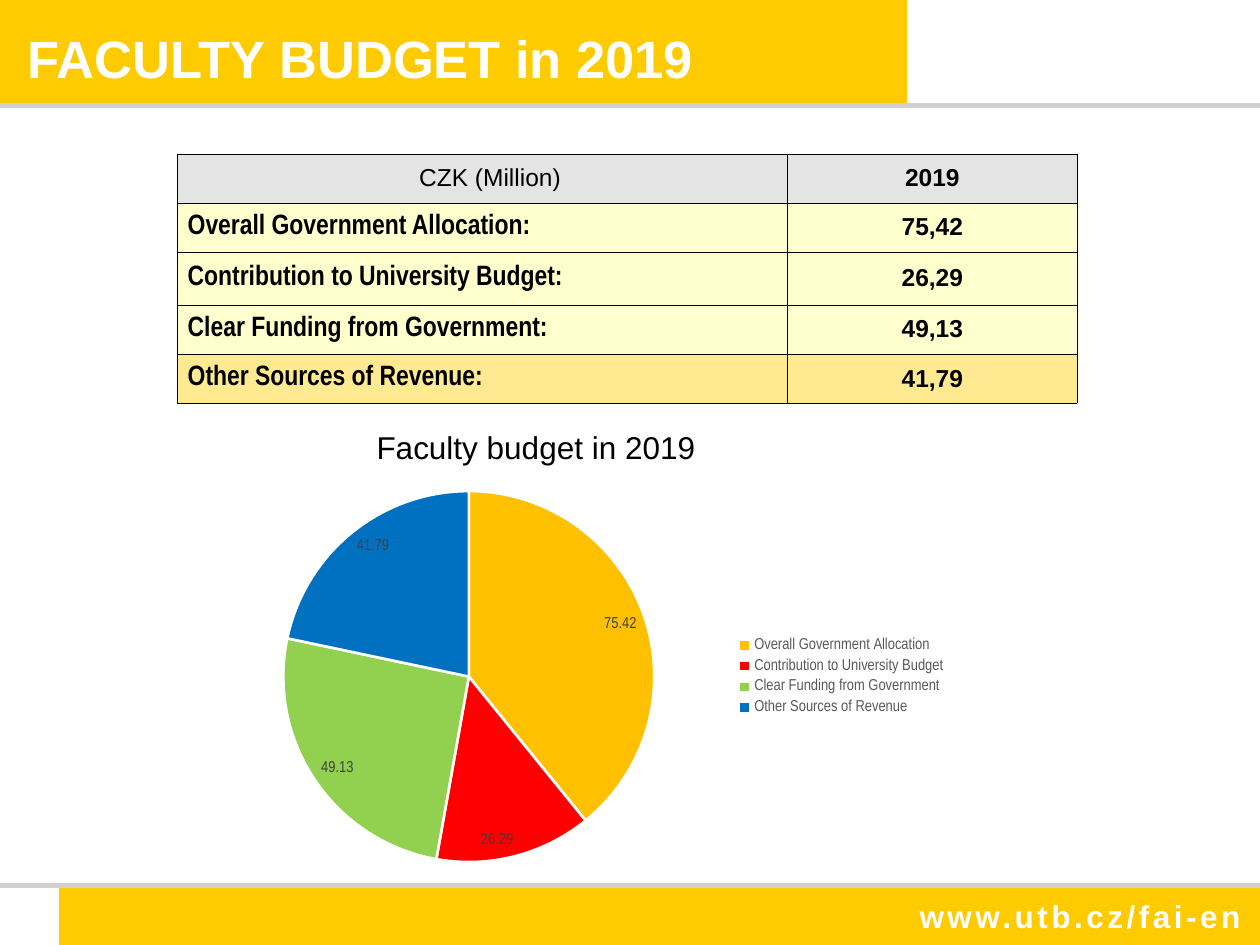
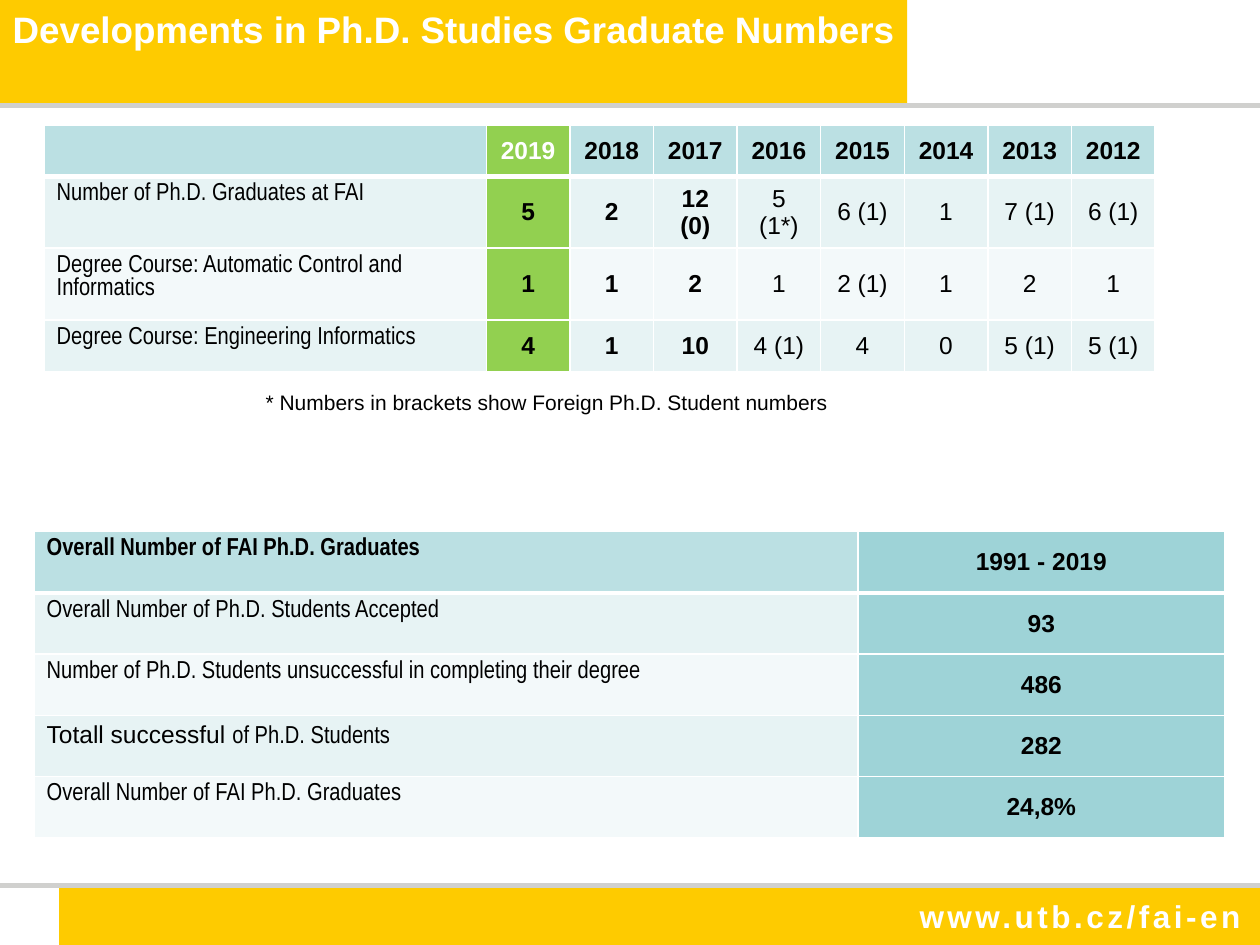
import pptx
import pptx.chart.data
import pptx.dml.color
import pptx.enum.chart
import pptx.enum.shapes
import pptx.enum.text
import pptx.oxml.ns
import pptx.util
from lxml import etree

Inches, Pt = pptx.util.Inches, pptx.util.Pt
qn = pptx.oxml.ns.qn
ALIGN = pptx.enum.text.PP_ALIGN
ANCHOR = pptx.enum.text.MSO_ANCHOR

COLORS = {
    "white": "FFFFFF", "black": "000000", "gold": "FECB00", "rule": "D0D0CE",
    "grey": "E4E4E4", "cream": "FFFFCD", "sand": "FFEA91",
    "teal": "9ED3D7", "teal head": "BBE0E3", "teal light": "E7F3F4",
    "teal pale": "F3F9FA", "green": "92D050", "amber": "FFC000",
    "red": "FF0000", "blue": "0070C0", "label": "404040", "legend": "595959",
}
SANS, NARROW = "Arial", "Arial Narrow"


def color(name):
    return pptx.dml.color.RGBColor.from_string(COLORS[name])


def inches(values):
    return [Inches(value) for value in values]


def set_font(font, name=SANS, size=14, tint="black", bold=False):
    values = {"name": name, "size": Pt(size), "bold": bold}
    for key, value in values.items():
        setattr(font, key, value)
    font.color.rgb = color(tint)


class FacultyDeck:
    def __init__(self):
        self.deck = pptx.Presentation()
        self.deck.slide_width, self.deck.slide_height = inches((10, 7.5))
        self.page = None

    def add_page(self, title, place, size):
        """Start a slide with the shared bands, rules, web address and title."""
        self.page = self.deck.slides.add_slide(self.deck.slide_layouts[5])
        for band in ((0, 0, 7.2, 0.84), (0.47, 7.04, 9.53, 0.46)):
            self.band(band)
        for top in (0.84, 7.03):
            self.rule(top)
        address = self.text("www.utb.cz/fai-en", (7.2, 7.07, 2.8, 0.4),
                            wrap=False, size=18, tint="white", bold=True)
        for properties in address.element.iter(qn("a:rPr")):
            properties.set("spc", "200")

        # The title goes in front of the band
        box = self.page.shapes.title
        box.element.getparent().append(box.element)
        self.fill_box(box, title, place, wrap=False,
                      size=size, tint="white", bold=True)

    def band(self, place):
        band = self.page.shapes.add_shape(
            pptx.enum.shapes.MSO_SHAPE.RECTANGLE, *inches(place))
        band.shadow.inherit = False
        band.fill.solid()
        band.fill.fore_color.rgb = color("gold")
        band.line.fill.background()

    def rule(self, top):
        rule = self.page.shapes.add_connector(
            pptx.enum.shapes.MSO_CONNECTOR.STRAIGHT,
            *inches((0, top, 10, top)))
        rule.line.color.rgb = color("rule")
        rule.line.width = Pt(3)
        etree.SubElement(rule.element.spPr, qn("a:effectLst"))

    def text(self, words, place, wrap=True, **style):
        box = self.page.shapes.add_textbox(*inches(place))
        self.fill_box(box, words, place, wrap, **style)
        return box

    def fill_box(self, box, words, place, wrap, **style):
        for key, value in zip(("left", "top", "width", "height"), inches(place)):
            setattr(box, key, value)
        frame = box.text_frame
        values = {"word_wrap": wrap, "vertical_anchor": ANCHOR.TOP,
                  "auto_size": pptx.enum.text.MSO_AUTO_SIZE.NONE}
        for key, value in values.items():
            setattr(frame, key, value)
        para = frame.paragraphs[0]
        para.alignment = ALIGN.LEFT
        span = para.add_run()
        span.text = words
        set_font(span.font, **style)

    def table(self, place, widths, heights, rows, style_cell):
        """Draw rows; style_cell(row, column) gives the look of each cell."""
        frame = self.page.shapes.add_table(len(rows), len(widths), *inches(place))
        table = frame.table
        table.first_row = table.horz_banding = False
        for column, width in zip(table.columns, widths):
            column.width = Inches(width)
        for line, height in zip(table.rows, heights):
            line.height = Inches(height)
        for row, values in enumerate(rows):
            for column, words in enumerate(values):
                self.cell(table.cell(row, column), words,
                          **style_cell(row, column))

    def cell(self, cell, words, fill, border, insets=(0.1, 0.05, 0.1, 0.05),
             align=ALIGN.CENTER, anchor=ANCHOR.MIDDLE, **style):
        sides = ("left", "top", "right", "bottom")
        values = {f"margin_{side}": Inches(inset)
                  for side, inset in zip(sides, insets)}
        values["vertical_anchor"] = anchor
        for key, value in values.items():
            setattr(cell, key, value)
        tint, width, bottom = border
        for side in "LRTB":
            edge = etree.SubElement(cell._tc.get_or_add_tcPr(), qn(f"a:ln{side}"))
            edge.set("w", str(Pt(bottom if side == "B" else width)))
            paint = etree.SubElement(edge, qn("a:solidFill"))
            etree.SubElement(paint, qn("a:srgbClr")).set("val", COLORS[tint])
        cell.fill.solid()
        cell.fill.fore_color.rgb = color(fill)

        para = cell.text_frame.paragraphs[0]
        para.alignment = align
        # A cell is plain words, or a list of (words, font name) pairs
        parts = words if isinstance(words, list) else [(words, None)]
        for part, name in parts:
            if part:
                span = para.add_run()
                span.text = part
                set_font(span.font, **(style | ({"name": name} if name else {})))

    def pie(self, place, slices):
        """Draw a pie from (category, value, colour) slices."""
        data = pptx.chart.data.CategoryChartData()
        data.categories = [category for category, _, _ in slices]
        data.add_series("Series 1", [value for _, value, _ in slices])
        chart = self.page.shapes.add_chart(
            pptx.enum.chart.XL_CHART_TYPE.PIE, *inches(place), data).chart
        set_font(chart.font, NARROW, 10)
        chart.has_title = False
        chart.has_legend = True
        chart.legend.position = pptx.enum.chart.XL_LEGEND_POSITION.RIGHT
        chart.legend.include_in_layout = False
        set_font(chart.legend.font, NARROW, 9, "legend")

        plot = chart.plots[0]
        plot.vary_by_categories = True
        for index, (_, _, tint) in enumerate(slices):
            look = plot.series[0].points[index].format
            look.fill.solid()
            look.fill.fore_color.rgb = color(tint)
            look.line.color.rgb = color("white")
            look.line.width = Pt(1.5)
        plot.has_data_labels = True
        labels = plot.data_labels
        labels.show_value = True
        labels.position = pptx.enum.chart.XL_LABEL_POSITION.INSIDE_END
        set_font(labels.font, NARROW, 9, "label")


def budget_style(row, column):
    fill = ("grey", "cream", "cream", "cream", "sand")[row]
    style = {"fill": fill, "border": ("black", 0.25, 0.25),
             "insets": (0, 0, 0, 0), "bold": True}
    if column == 0 and row == 0:
        style |= {"insets": (0.12, 0, 0, 0), "bold": False}
    elif column == 0:
        style |= {"insets": (0.08, 0, 0, 0), "align": ALIGN.LEFT,
                  "name": NARROW, "size": 16}
    return style


def teal_style(row, column):
    """Shared look of both graduate tables."""
    fill = "teal head" if row == 0 else ("teal pale", "teal light")[row % 2]
    style = {"fill": fill, "border": ("white", 1, 1 if row else 3)}
    if column == 0:
        style |= {"align": ALIGN.LEFT, "anchor": ANCHOR.TOP, "name": NARROW}
    return style


def yearly_style(row, column):
    style = teal_style(row, column)
    style["bold"] = column > 0 and (row == 0 or column <= 3)
    if column == 1:
        style |= {"fill": "green", "tint": "black" if row else "white"}
    return style


def overall_style(row, column):
    style = teal_style(row, column)
    style["bold"] = row == 0 or column == 1
    if column == 1:
        style["fill"] = "teal"
    return style


def build_budget(faculty):
    faculty.add_page("FACULTY BUDGET in 2019", (0.12, 0.16, 5.54, 0.61), 30)
    slices = [
        ("Overall Government Allocation", 75.42, "amber"),
        ("Contribution to University Budget", 26.29, "red"),
        ("Clear Funding from Government", 49.13, "green"),
        ("Other Sources of Revenue", 41.79, "blue"),
    ]
    rows = [("CZK (Million)", "2019")]
    rows += [(f"{category}:", f"{value:.2f}".replace(".", ","))
             for category, value, _ in slices]
    faculty.table((1.41, 1.22, 7.14, 1.98), (4.84, 2.3),
                  (0.39, 0.39, 0.42, 0.39, 0.39), rows, budget_style)
    faculty.text("Faculty budget in 2019", (2.89, 3.35, 4.41, 0.4), size=18)
    faculty.pie((1.61, 3.76, 6, 3.22), slices)


def build_graduates(faculty):
    faculty.add_page("Developments in Ph.D. Studies Graduate Numbers",
                     (0, 0, 7.28, 0.45), 21)
    # Graduates by year, newest first
    years = [str(year) for year in range(2019, 2011, -1)]
    yearly = [
        ["", *years],
        ["Number of Ph.D. Graduates at FAI",
         "5", "2", "12 (0)", "5 (1*)", "6 (1)", "1", "7 (1)", "6 (1)"],
        ["Degree Course: Automatic Control and Informatics",
         "1", "1", "2", "1", "2 (1)", "1", "2", "1"],
        ["Degree Course: Engineering Informatics",
         "4", "1", "10", "4 (1)", "4", "0", "5 (1)", "5 (1)"],
    ]
    year_width = (8.82 - 3.51) / len(years)
    faculty.table((0.35, 0.99, 8.82, 1.96), [3.51] + [year_width] * len(years),
                  (0.41, 0.57, 0.57, 0.41), yearly, yearly_style)
    faculty.text("* Numbers in brackets show Foreign Ph.D. Student numbers",
                 (2.01, 3.04, 5.51, 0.3), size=12)

    # Totals for the whole period
    overall = [
        ("Overall Number of FAI Ph.D. Graduates", "1991 - 2019"),
        ("Overall Number of Ph.D. Students Accepted", "93"),
        ("Number of Ph.D. Students unsuccessful in completing their degree",
         "486"),
        ([("Totall successful ", SANS), ("of Ph.D. Students", NARROW)], "282"),
        ("Overall Number of FAI Ph.D. Graduates", "24,8%"),
    ]
    faculty.table((0.27, 4.22, 9.45, 2.43), (6.54, 2.91),
                  [2.43 / len(overall)] * len(overall), overall, overall_style)


def main():
    faculty = FacultyDeck()
    build_budget(faculty)
    build_graduates(faculty)
    faculty.deck.save("out.pptx")


if __name__ == "__main__":
    main()
